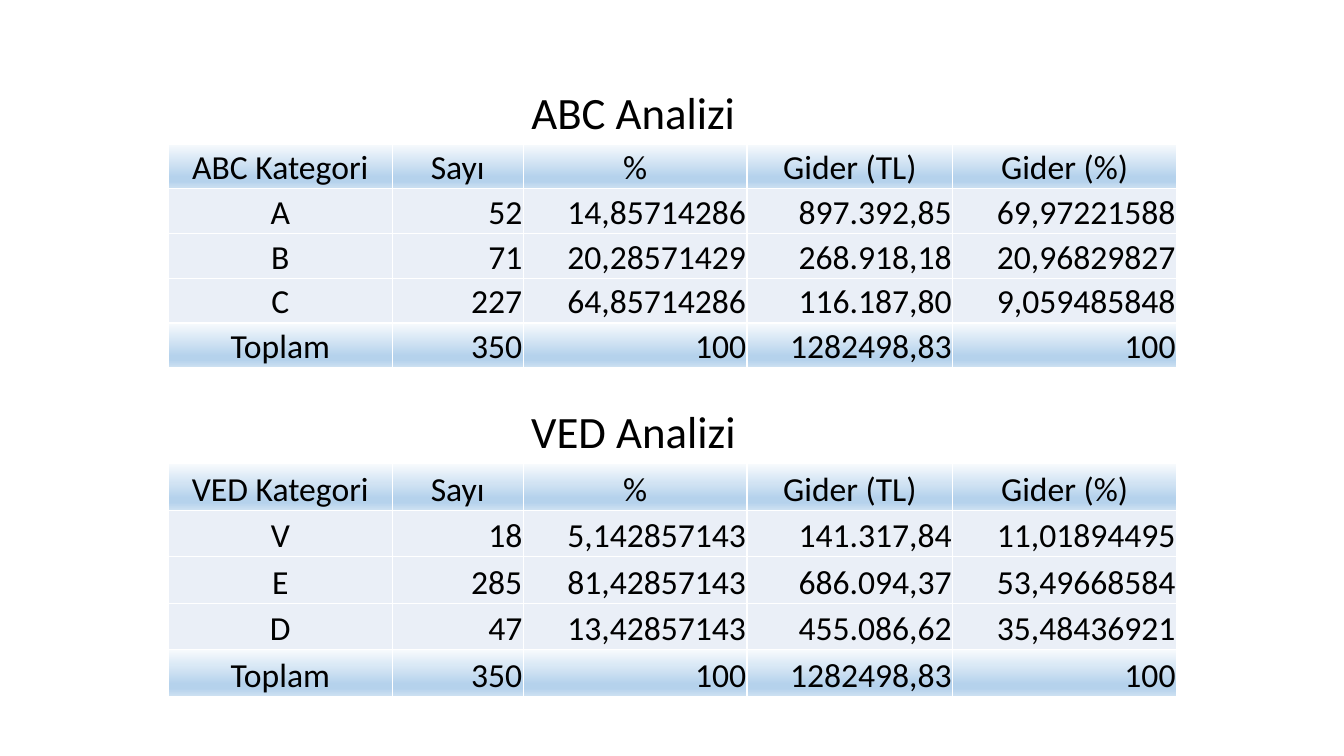
from dataclasses import dataclass

from lxml.etree import SubElement
from pptx import Presentation
from pptx.dml.color import RGBColor
from pptx.enum.text import MSO_ANCHOR, MSO_AUTO_SIZE, PP_ALIGN
from pptx.oxml.ns import qn
from pptx.util import Inches, Pt


@dataclass(frozen=True)
class Theme:
    font: str = "Calibri"
    heading_size: int = 32
    cell_size: int = 24
    text: str = "000000"
    border: str = "FFFFFF"
    body_fill: str = "EAEFF7"
    band_stops: tuple = ((0, "F7FAFD"), (74, "B5D2EC"), (83, "B5D2EC"), (100, "CEE1F2"))


THEME = Theme()
TABLE_LEFT = 1.67
COLUMN_WIDTHS = (2.22, 1.3, 2.22, 2.04, 2.22)
SHARED_HEADERS = ("Sayı", "%", "Gider (TL)", "Gider (%)")
TOTAL_ROW = ("Toplam", "350", "100", "1282498,83", "100")

ANALYSES = (
    {"name": "ABC", "heading_top": 0.79, "table_top": 1.43, "table_height": 2.22, "rows": (
        ("A", "52", "14,85714286", "897.392,85", "69,97221588"),
        ("B", "71", "20,28571429", "268.918,18", "20,96829827"),
        ("C", "227", "64,85714286", "116.187,80", "9,059485848"),
    )},
    {"name": "VED", "heading_top": 3.96, "table_top": 4.6, "table_height": 2.31, "rows": (
        ("V", "18", "5,142857143", "141.317,84", "11,01894495"),
        ("E", "285", "81,42857143", "686.094,37", "53,49668584"),
        ("D", "47", "13,42857143", "455.086,62", "35,48436921"),
    )},
)


def write_text(frame, text, *, size, align=PP_ALIGN.LEFT, anchor=MSO_ANCHOR.TOP):
    frame.word_wrap = True
    frame.vertical_anchor = anchor
    paragraph = frame.paragraphs[0]
    paragraph.alignment = align
    run = paragraph.add_run()
    run.text = text
    run.font.name = THEME.font
    run.font.size = Pt(size)
    run.font.color.rgb = RGBColor.from_string(THEME.text)


def paint_cell(cell, is_band):
    """Draw the cell's borders, then its gradient band or plain fill."""
    properties = cell._tc.get_or_add_tcPr()
    for side in ("L", "R", "T", "B"):
        line = SubElement(properties, qn(f"a:ln{side}"), w=str(Pt(1)))
        line_fill = SubElement(line, qn("a:solidFill"))
        SubElement(line_fill, qn("a:srgbClr"), val=THEME.border)
    if is_band:
        gradient = SubElement(properties, qn("a:gradFill"), rotWithShape="1")
        stops = SubElement(gradient, qn("a:gsLst"))
        for percent, color in THEME.band_stops:
            stop = SubElement(stops, qn("a:gs"), pos=str(percent * 1000))
            SubElement(stop, qn("a:srgbClr"), val=color)
        SubElement(gradient, qn("a:lin"), ang=str(90 * 60000), scaled="0")
    else:
        cell.fill.solid()
        cell.fill.fore_color.rgb = RGBColor.from_string(THEME.body_fill)


presentation = Presentation()
presentation.slide_width = Inches(13.33)
presentation.slide_height = Inches(7.5)
slide = presentation.slides.add_slide(presentation.slide_layouts[5])

for analysis in ANALYSES:
    # The first heading is the slide title; the second is a matching text box.
    if analysis is ANALYSES[0]:
        heading = slide.shapes.title
    else:
        heading = slide.shapes.add_textbox(0, 0, 0, 0)
    heading.left, heading.top = Inches(5.17), Inches(analysis["heading_top"])
    heading.width, heading.height = Inches(2.28), Inches(0.64)
    write_text(heading.text_frame, f"{analysis['name']} Analizi", size=THEME.heading_size)
    heading.text_frame.auto_size = MSO_AUTO_SIZE.SHAPE_TO_FIT_TEXT

    header_row = (f"{analysis['name']} Kategori", *SHARED_HEADERS)
    rows = (header_row, *analysis["rows"], TOTAL_ROW)
    table = slide.shapes.add_table(
        len(rows), len(COLUMN_WIDTHS), Inches(TABLE_LEFT), Inches(analysis["table_top"]),
        Inches(sum(COLUMN_WIDTHS)), Inches(analysis["table_height"]),
    ).table
    table.horz_banding = False
    table.first_row = False
    for column, width in zip(table.columns, COLUMN_WIDTHS):
        column.width = Inches(width)

    for row_index, values in enumerate(rows):
        for column_index, value in enumerate(values):
            cell = table.cell(row_index, column_index)
            cell.margin_left = cell.margin_right = cell.margin_top = Inches(0.01)
            cell.margin_bottom = 0
            cell.vertical_anchor = MSO_ANCHOR.BOTTOM
            is_label = row_index == 0 or column_index == 0
            write_text(
                cell.text_frame, value, size=THEME.cell_size,
                align=PP_ALIGN.CENTER if is_label else PP_ALIGN.RIGHT,
                anchor=MSO_ANCHOR.BOTTOM,
            )
            paint_cell(cell, is_band=row_index in (0, len(rows) - 1))

presentation.save("out.pptx")
